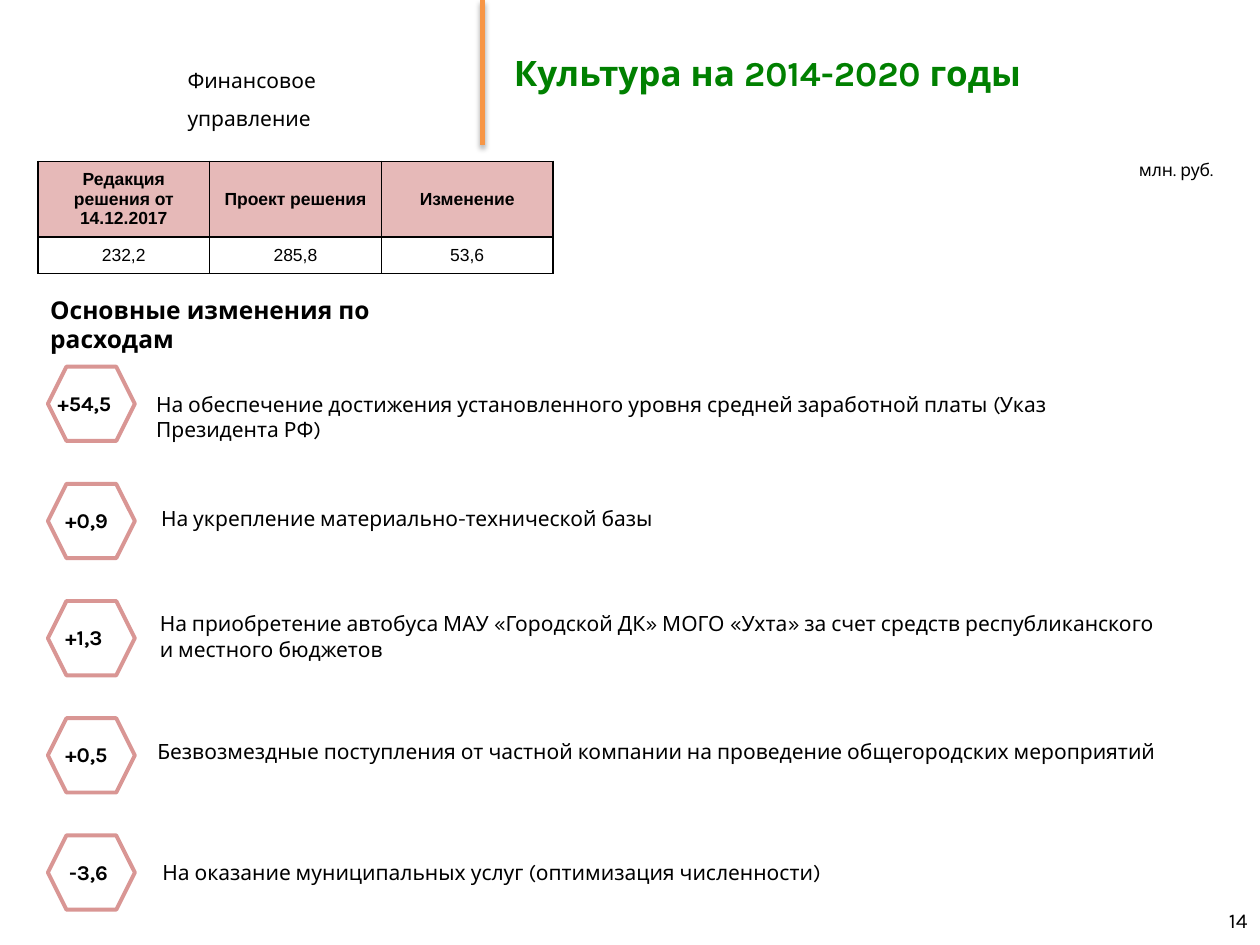
from collections import namedtuple
from dataclasses import dataclass
from lxml.etree import fromstring
from pptx import Presentation
from pptx.dml.color import RGBColor as Rgb
from pptx.enum.shapes import MSO_CONNECTOR as Conn, MSO_SHAPE as Shape
from pptx.enum.text import MSO_ANCHOR as Anchor, PP_ALIGN as Align
from pptx.util import Inches, Pt

NS = "http://schemas.openxmlformats.org/drawingml/2006/main"
Box = namedtuple("Box", "x y w h")
Item = namedtuple("Item", "value inset width note left drop")


@dataclass(frozen=True)
class Theme:
    """Hold the colours, fonts and type sizes."""
    font: str = "Karla"
    grid: str = "Arial"
    ink: str = "000000"
    green: str = "008000"
    orange: str = "F79646"
    pink: str = "E6B9B8"
    rose: str = "D99694"
    small: int = 10
    body: int = 12
    head: int = 14
    title: int = 20


THEME = Theme()

ROWS = [
    ["Редакция решения от 14.12.2017", "Проект решения", "Изменение"],
    ["232,2", "285,8", "53,6"],
]

ITEMS = [
    Item("+54,5", -0.02, 0.71, "На обеспечение достижения установленного уровня средней "
         "заработной платы (Указ Президента РФ)", 0.76, 0.15),
    Item("+0,9", 0.04, 0.61, "На укрепление материально-технической базы", 0.8, 0.12),
    Item("+1,3", 0.04, 0.61, "На приобретение автобуса МАУ «Городской ДК» МОГО «Ухта» "
         "за счет средств республиканского и местного бюджетов", 0.79, 0.03),
    Item("+0,5", 0.04, 0.61, "Безвозмездные поступления от частной компании "
         "на проведение общегородских мероприятий", 0.77, 0.11),
    Item("-3,6", 0.07, 0.54, "На оказание муниципальных услуг "
         "(оптимизация численности)", 0.81, 0.14),
]


def style(para, size, color=THEME.ink, bold=False, face=THEME.font):
    """Format every run of a paragraph."""
    for run in para.runs:
        font = run.font
        font.name, font.size, font.bold = face, Pt(size), bold
        font.color.rgb = Rgb.from_string(color)


def label(slide, box, text, size=THEME.body, wrap=True, anchor=Anchor.TOP, **look):
    """Add a text box and return its paragraph."""
    frame = slide.shapes.add_textbox(*map(Inches, box)).text_frame
    frame.word_wrap = wrap
    frame.vertical_anchor = anchor
    frame.text = text
    para = frame.paragraphs[0]
    style(para, size, **look)
    return para


def header(slide, box):
    """Place the office name, the upright rule and the title."""
    office = label(slide, Box(box.x + 1.39, box.y + 0.39, 2.1, 0.36),
                   "Финансовое управление")
    office.line_spacing = 1.5
    x = Inches(box.x + 3.83)
    rule = slide.shapes.add_connector(Conn.STRAIGHT, x, Inches(box.y),
                                      x, Inches(box.y + box.h))
    rule.line.color.rgb = Rgb.from_string(THEME.orange)
    rule.line.width = Pt(3)
    rule._element.spPr.append(fromstring(
        f'<a:effectLst xmlns:a="{NS}"><a:outerShdw blurRad="{Pt(3.1)}" '
        f'dist="{Pt(1.8)}" dir="5400000" rotWithShape="0">'
        f'<a:srgbClr val="{THEME.ink}"><a:alpha val="35000"/></a:srgbClr>'
        '</a:outerShdw></a:effectLst>'))
    label(slide, Box(box.x + 3.98, box.y, box.w - 3.98, box.h),
          "Культура на 2014-2020 годы", THEME.title, anchor=Anchor.MIDDLE,
          color=THEME.green, bold=True)


def border(cell):
    """Draw a thin line on each side of a cell."""
    props = cell._tc.get_or_add_tcPr()
    for side in "LRTB":
        props.append(fromstring(
            f'<a:ln{side} xmlns:a="{NS}" w="{Pt(1)}"><a:solidFill>'
            f'<a:srgbClr val="{THEME.ink}"/></a:solidFill></a:ln{side}>'))


def totals(slide, box):
    """Place the table of totals."""
    table = slide.shapes.add_table(len(ROWS), len(ROWS[0]),
                                   *map(Inches, box)).table
    for col in table.columns:
        col.width = Inches(box.w / len(ROWS[0]))
    for row, high in zip(table.rows, (box.h - 0.29, 0.29)):
        row.height = Inches(high)
    for r, row in enumerate(ROWS):
        for c, text in enumerate(row):
            cell = table.cell(r, c)
            cell.text = text
            cell.vertical_anchor = Anchor.MIDDLE
            para = cell.text_frame.paragraphs[0]
            para.alignment = Align.CENTER
            style(para, THEME.small, bold=r == 0, face=THEME.grid)
            border(cell)
            if r == 0:
                cell.fill.solid()
                cell.fill.fore_color.rgb = Rgb.from_string(THEME.pink)
            else:
                cell.fill.background()


def change(slide, box, item):
    """Place one change: its value, its note and the hexagon."""
    label(slide, Box(box.x + item.inset, box.y + 0.14, item.width, 0.3),
          item.value, wrap=False, bold=True)
    label(slide, Box(box.x + item.left, box.y + item.drop, 8.17, 0.3), item.note)
    hexa = slide.shapes.add_shape(Shape.HEXAGON, *map(Inches, box))
    hexa.shadow.inherit = False
    hexa.fill.background()
    hexa.line.color.rgb = Rgb.from_string(THEME.rose)
    hexa.line.width = Pt(2.25)


def changes(slide, box, pitch=0.93):
    """Place the heading and the list of changes."""
    label(slide, Box(box.x, box.y, 3.75, 0.34),
          "Основные изменения по расходам", THEME.head, bold=True)
    for i, item in enumerate(ITEMS):
        change(slide, Box(box.x + 0.08, box.y + 0.62 + i * pitch, 0.69, 0.59), item)


def main():
    """Build the slide and save it."""
    deck = Presentation()
    deck.slide_width, deck.slide_height = Inches(10), Inches(7.5)
    slide = deck.slides.add_slide(deck.slide_layouts[6])
    header(slide, Box(0, 0, 10, 1.15))
    label(slide, Box(8.94, 1.21, 0.8, 0.27), "млн. руб.", THEME.small, wrap=False)
    totals(slide, Box(0.3, 1.28, 4.09, 0.89))
    changes(slide, Box(0.3, 2.29, 9.1, 4.92))
    page = label(slide, Box(7.67, 7.1, 2.33, 0.4), "14", anchor=Anchor.MIDDLE)
    page.alignment = Align.RIGHT
    deck.save("out.pptx")


if __name__ == "__main__":
    main()
